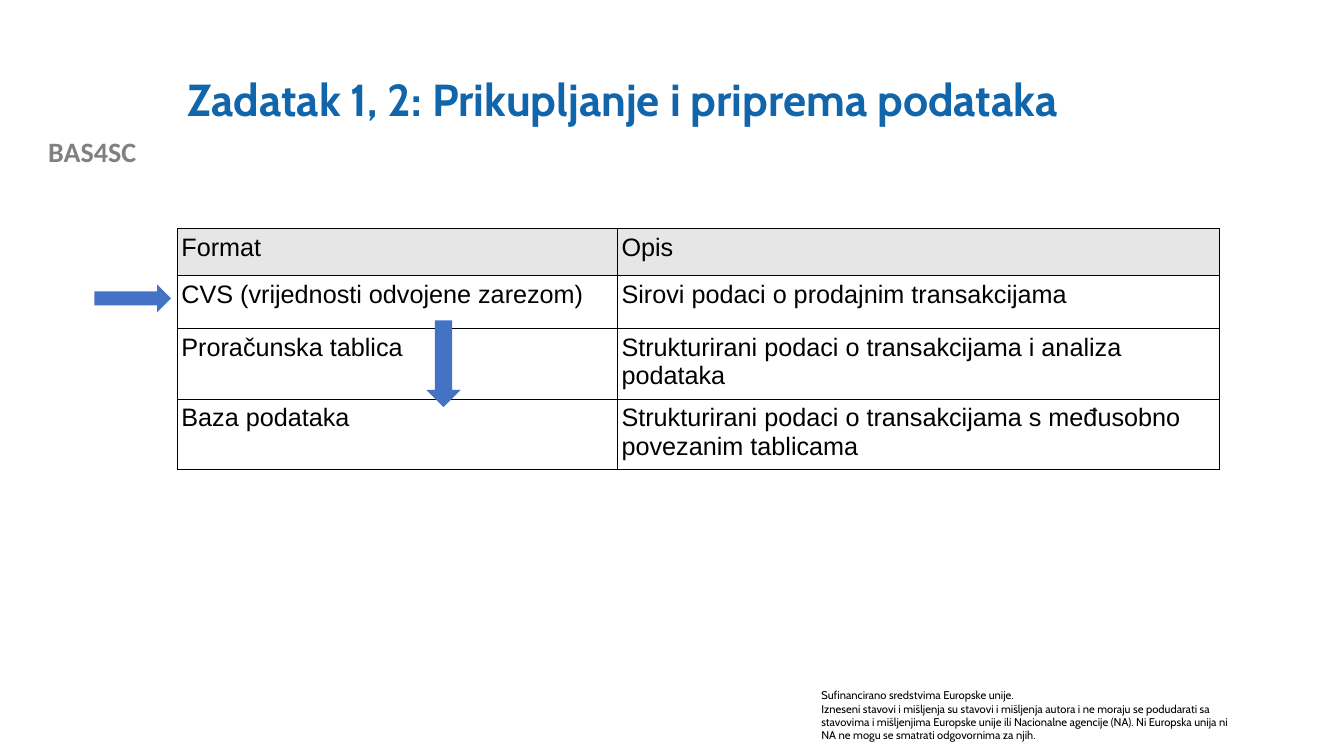
from lxml.etree import SubElement
from pptx import Presentation
from pptx.dml.color import RGBColor
from pptx.enum.shapes import MSO_SHAPE
from pptx.enum.text import MSO_ANCHOR, PP_ALIGN
from pptx.oxml.ns import qn
from pptx.util import Pt


def rgb(value):
    return RGBColor.from_string(value)


class SlideBuilder:
    """Draw styled elements on one slide, with lengths in points."""

    BLUE, GREY, BLACK = "1065AB", "808080", "000000"
    ARROW, HEADER = "4472C4", "E7E6E6"

    def __init__(self, s):
        self.s = s

    def format(self, p, text, color, fmt, **para):
        r = p.add_run()
        r.text = text
        for name, value in fmt.items():
            setattr(r.font, name, value)
        r.font.color.rgb = rgb(color)
        for name, value in para.items():
            setattr(p, name, value)

    def text(self, box, lines, color, fmt, anchor=MSO_ANCHOR.TOP, **para):
        tf = self.s.shapes.add_textbox(*map(Pt, box)).text_frame
        tf.word_wrap = True
        tf.vertical_anchor = anchor
        for i, line in enumerate(lines):
            p = tf.add_paragraph() if i else tf.paragraphs[0]
            self.format(p, line, color, fmt, **para)

    def arrow(self, kind, box):
        sp = self.s.shapes.add_shape(kind, *map(Pt, box))
        sp.shadow.inherit = False
        sp.fill.solid()
        sp.fill.fore_color.rgb = rgb(self.ARROW)
        sp.line.fill.background()

    def border(self, cell):
        tcPr = cell._tc.get_or_add_tcPr()
        for side in ("lnL", "lnR", "lnT", "lnB"):
            ln = SubElement(tcPr, qn(f"a:{side}"), w=str(Pt(0.57)))
            fill = SubElement(ln, qn("a:solidFill"))
            SubElement(fill, qn("a:srgbClr"), val=self.BLACK)

    def table(self, left, top, widths, heights, rows):
        box = map(Pt, (left, top, sum(widths), sum(heights)))
        table = self.s.shapes.add_table(len(rows), len(widths), *box).table
        table.horz_banding = False
        for column, width in zip(table.columns, widths):
            column.width = Pt(width)
        margins = {"margin_left": 2.7, "margin_right": 2.7,
                   "margin_top": 3.6, "margin_bottom": 3.6}
        fmt = {"name": "Arial", "size": Pt(18), "bold": False}
        for i, (height, row) in enumerate(zip(heights, rows)):
            table.rows[i].height = Pt(height)
            for j, text in enumerate(row):
                cell = table.cell(i, j)
                for name, value in margins.items():
                    setattr(cell, name, Pt(value))
                self.border(cell)
                if i:
                    cell.fill.background()
                else:
                    cell.fill.solid()
                    cell.fill.fore_color.rgb = rgb(self.HEADER)
                self.format(cell.text_frame.paragraphs[0], text, self.BLACK, fmt)


def main():
    prs = Presentation()
    prs.slide_width, prs.slide_height = Pt(960), Pt(540)
    b = SlideBuilder(prs.slides.add_slide(prs.slide_layouts[6]))

    b.text((0, 92.2, 131.8, 31), ["BAS4SC"], b.GREY,
           {"name": "Calibri", "size": Pt(20), "bold": True},
           alignment=PP_ALIGN.CENTER)
    b.text((579.6, 488.2, 314.6, 46), [
        "Sufinancirano sredstvima Europske unije.",
        "Izneseni stavovi i mišljenja su stavovi i mišljenja autora i ne moraju "
        "se podudarati sa stavovima i mišljenjima Europske unije ili Nacionalne "
        "agencije (NA). Ni Europska unija ni NA ne mogu se smatrati "
        "odgovornima za njih.",
    ], b.BLACK, {"name": "Cabin", "size": Pt(8)})
    b.text((126.7, 28.8, 767.5, 87.8),
           ["Zadatak 1, 2: Prikupljanje i priprema podataka"], b.BLUE,
           {"name": "Cabin", "size": Pt(32), "bold": True},
           anchor=MSO_ANCHOR.MIDDLE, line_spacing=0.9)
    b.table(126.9, 163.2, (314.4, 430), (33.4, 38, 38, 38), [
        ("Format", "Opis"),
        ("CVS (vrijednosti odvojene zarezom)",
         "Sirovi podaci o prodajnim transakcijama"),
        ("Proračunska tablica",
         "Strukturirani podaci o transakcijama i analiza podataka"),
        ("Baza podataka",
         "Strukturirani podaci o transakcijama s međusobno povezanim tablicama"),
    ])
    b.arrow(MSO_SHAPE.RIGHT_ARROW, (67.5, 203.2, 54.7, 20))
    b.arrow(MSO_SHAPE.DOWN_ARROW, (304.6, 228.8, 24.5, 62))
    prs.save("out.pptx")


if __name__ == "__main__":
    main()
